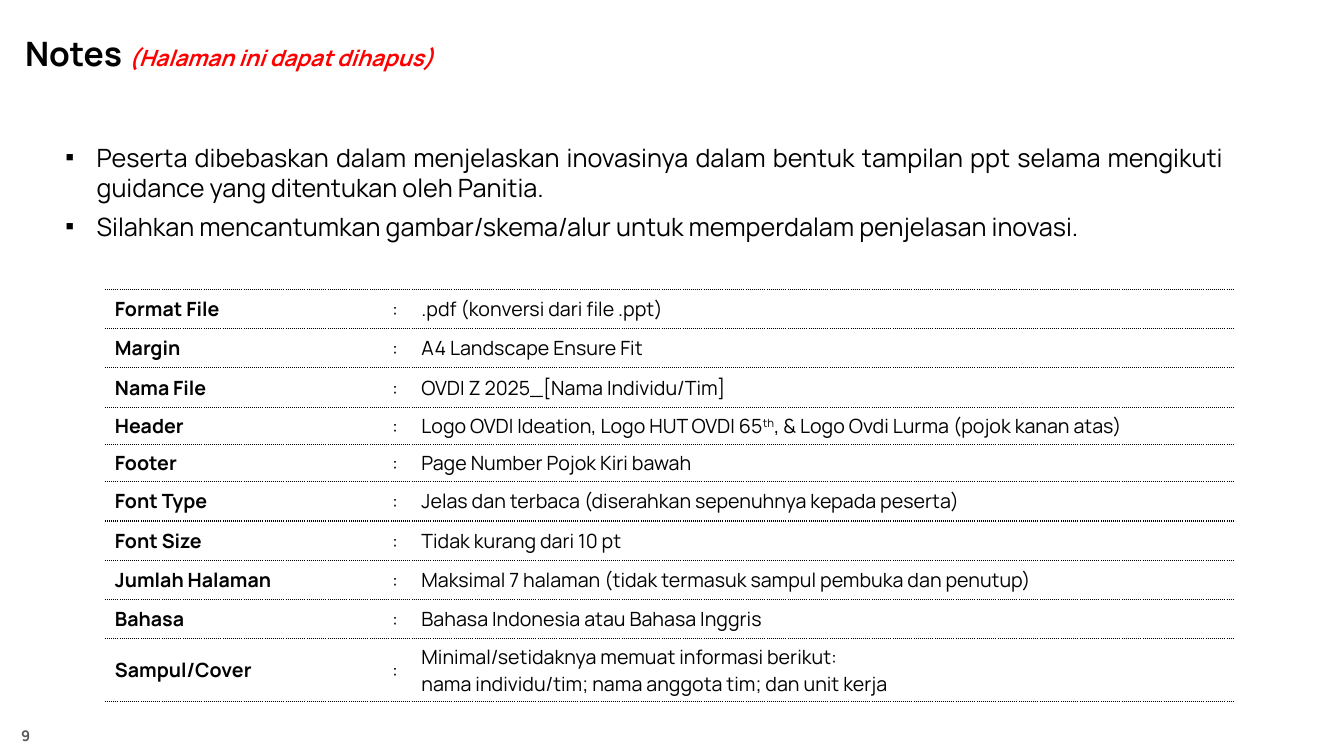
from dataclasses import dataclass

from lxml import etree
from pptx import Presentation
from pptx import util as u
from pptx.dml.color import RGBColor
from pptx.enum import text
from pptx.oxml.ns import qn

FONT = "Manrope"
BLACK, RED, GREY = "000000", "FF0000", "595959"


@dataclass
class Run:
    text: str
    size: float = 14
    color: str = BLACK
    bold: bool = False
    italic: bool = False
    baseline: int = 0


@dataclass
class Row:
    label: str
    lines: list[list[Run]]
    height: float = 0.39


def rgb(value: str) -> RGBColor:
    return RGBColor.from_string(value)


def write(tf, paragraphs: list[list[Run]], *, align=text.PP_ALIGN.LEFT,
          anchor=text.MSO_ANCHOR.MIDDLE, after: float = 0,
          spacing: float = 1.0, bullet: str = "") -> None:
    """Fill a text frame, one list of runs for each paragraph."""
    tf.word_wrap = True
    tf.vertical_anchor = anchor
    for i, runs in enumerate(paragraphs):
        p = tf.paragraphs[0] if i == 0 else tf.add_paragraph()
        p.alignment, p.line_spacing = align, spacing
        p.space_after = u.Pt(after)
        if bullet:
            pPr = p._p.get_or_add_pPr()
            pPr.set("marL", str(u.Inches(0.31)))
            pPr.set("indent", str(-u.Inches(0.31)))
            etree.SubElement(pPr, qn("a:buFont"), typeface="Arial")
            etree.SubElement(pPr, qn("a:buChar"), char=bullet)
        for run in runs:
            r = p.add_run()
            r.text = run.text
            f = r.font
            f.name, f.size = FONT, u.Pt(run.size)
            f.bold, f.italic = run.bold, run.italic
            f.color.rgb = rgb(run.color)
            if run.baseline:
                r._r.get_or_add_rPr().set("baseline", str(run.baseline * 1000))


def add_text(slide, left: float, top: float, width: float, height: float,
             paragraphs: list[list[Run]], **fmt) -> None:
    box = slide.shapes.add_textbox(*map(u.Inches, (left, top, width, height)))
    write(box.text_frame, paragraphs, **fmt)


def set_borders(cell) -> None:
    """Dotted rules above and below, nothing at the sides."""
    tcPr = cell._tc.get_or_add_tcPr()
    for i, side in enumerate(("lnL", "lnR", "lnT", "lnB")):
        ln = etree.Element(qn(f"a:{side}"), w=str(u.Pt(1)))
        if side in ("lnT", "lnB"):
            fill = etree.SubElement(ln, qn("a:solidFill"))
            etree.SubElement(fill, qn("a:srgbClr"), val=BLACK)
            etree.SubElement(ln, qn("a:prstDash"), val="sysDot")
        else:
            etree.SubElement(ln, qn("a:noFill"))
        tcPr.insert(i, ln)


def add_rules_table(slide, rows: list[Row], widths: list[float]) -> None:
    frame = slide.shapes.add_table(
        len(rows), len(widths), u.Inches(1.04), u.Inches(2.87),
        u.Inches(sum(widths)), u.Inches(sum(row.height for row in rows)))
    table = frame.table
    table.first_row = table.horz_banding = False
    for column, width in zip(table.columns, widths):
        column.width = u.Inches(width)
    for i, row in enumerate(rows):
        table.rows[i].height = u.Inches(row.height)
        contents = [[[Run(row.label, bold=True)]], [[Run(":")]], row.lines]
        for cell, paragraphs in zip(table.rows[i].cells, contents):
            cell.fill.background()
            cell.vertical_anchor = text.MSO_ANCHOR.MIDDLE
            write(cell.text_frame, paragraphs, anchor=None)
            set_borders(cell)


ROWS = [
    Row("Format File", [[Run(".pdf (konversi dari file .ppt)")]]),
    Row("Margin", [[Run("A4 Landscape Ensure Fit")]]),
    Row("Nama File", [[Run("OVDI Z 2025_[Nama Individu/Tim]")]]),
    Row("Header", [[Run("Logo OVDI Ideation, Logo HUT OVDI 65"),
                    Run("th", baseline=30),
                    Run(", & Logo Ovdi Lurma (pojok kanan atas)")]], 0.37),
    Row("Footer", [[Run("Page Number Pojok Kiri bawah")]], 0.37),
    Row("Font Type",
        [[Run("Jelas dan terbaca (diserahkan sepenuhnya kepada peserta)")]]),
    Row("Font Size", [[Run("Tidak kurang dari 10 pt")]]),
    Row("Jumlah Halaman",
        [[Run("Maksimal 7 halaman (tidak termasuk sampul pembuka dan penutup)")]]),
    Row("Bahasa", [[Run("Bahasa Indonesia atau Bahasa Inggris")]]),
    Row("Sampul/Cover",
        [[Run("Minimal/setidaknya memuat informasi berikut:")],
         [Run("nama individu/tim; nama anggota tim; dan unit kerja")]], 0.62),
]

NOTES = [
    "Peserta dibebaskan dalam menjelaskan inovasinya dalam bentuk tampilan ppt "
    "selama mengikuti guidance yang ditentukan oleh Panitia.",
    "Silahkan mencantumkan gambar/skema/alur untuk memperdalam penjelasan inovasi.",
]


def main() -> None:
    prs = Presentation()
    prs.slide_width, prs.slide_height = u.Inches(13.33), u.Inches(7.5)
    s = prs.slides.add_slide(prs.slide_layouts[6])

    # Title and page number
    add_text(s, 0.15, 0.15, 10.15, 0.8,
             [[Run("Notes ", 24, bold=True),
               Run("(Halaman ini dapat dihapus)", 16, RED, True, True)]],
             spacing=0.9)
    add_text(s, 0, 7.1, 0.51, 0.4, [[Run("9", 10.5, GREY, True)]],
             align=text.PP_ALIGN.CENTER)

    # Bulleted notes
    add_text(s, 0.55, 1.36, 11.68, 1.09, [[Run(note, 18)] for note in NOTES],
             align=text.PP_ALIGN.JUSTIFY, anchor=text.MSO_ANCHOR.TOP,
             after=6, bullet="▪")

    # Table of format rules
    add_rules_table(s, ROWS, [2.75, 0.29, 8.16])

    prs.save("out.pptx")


if __name__ == "__main__":
    main()
